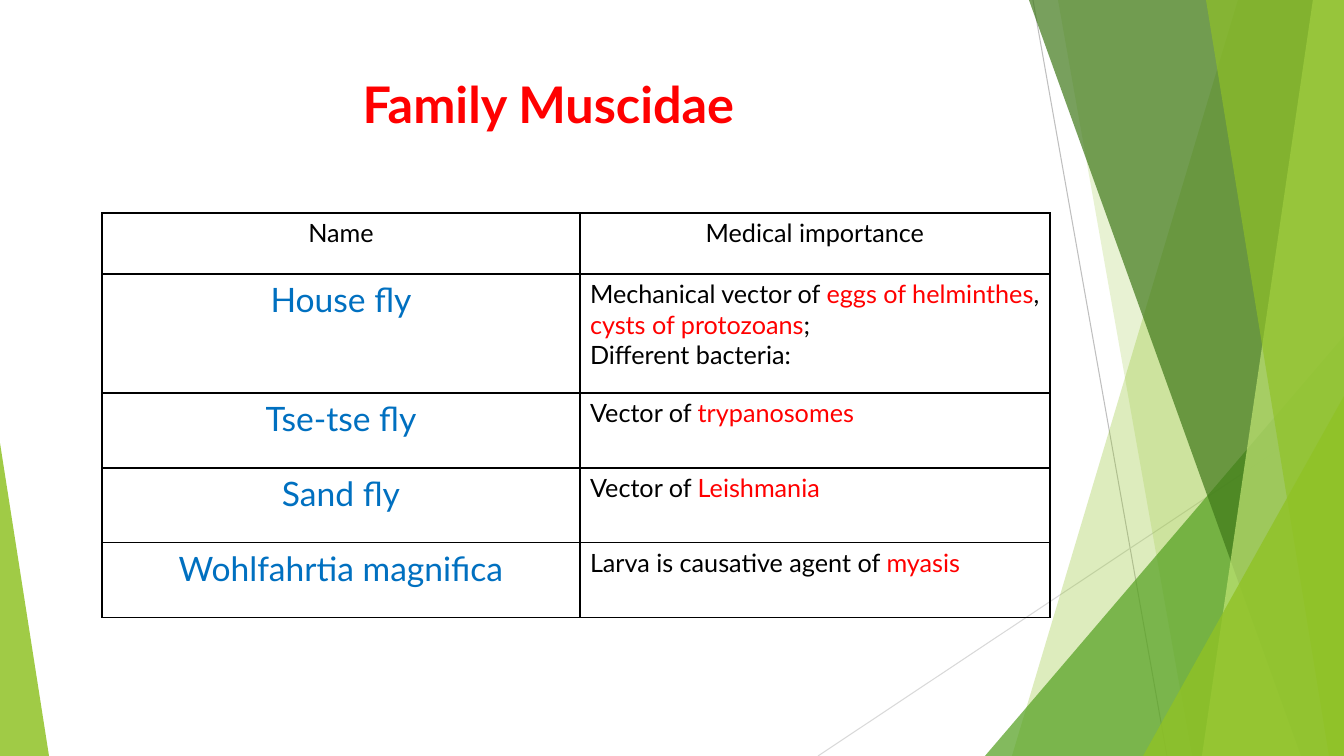
"""Build a slide on the medical importance of the Muscidae fly family."""
import pptx
import pptx.dml.color
import pptx.enum.shapes
import pptx.enum.text
import pptx.oxml
import pptx.oxml.ns
import pptx.util

TITLE = "Family Muscidae"
TITLE_BOX = (75, 68, 947, 145)
HEADERS = ("Name", "Medical importance")
FLIES = [
    ("House fly", [
        [("Mechanical vector of ", "text"), ("eggs of helminthes", "accent"), (", ", "text"),
         ("cysts of protozoans", "accent"), (";", "text")],
        [("Different bacteria:", "text")],
    ]),
    ("Tse-tse fly", [[("Vector of ", "text"), ("trypanosomes", "accent")]]),
    ("Sand fly", [[("Vector of ", "text"), ("Leishmania", "accent")]]),
    ("Wohlfahrtia magnifica", [[("Larva is causative agent of ", "text"), ("myasis", "accent")]]),
]
TABLE_ORIGIN = (102, 213)
COLUMN_WIDTHS = (478, 470)
ROW_HEIGHTS = (61, 119, 75, 75, 75)

SLIDE_SIZE = (1344, 756)
RIGHT, BOTTOM = SLIDE_SIZE
THIN_LINES = [
    ((1033, 0), (1167, BOTTOM), "line_dark"),
    ((RIGHT, 406), (818, BOTTOM), "line_light"),
]
FACETS = [
    ("band", (1238, 1012), "lime", 30),
    ("band", (1058, 1192), "lime", 20),
    ("triangle", (985, 336, 359, 420), 1, "green", 72),
    ("band", (1029, 1301), "forest", 70),
    ("band", (1313, 1202), "pale", 70),
    ("band", (1206, 1329), "lime", 65),
    ("triangle", (1143, 396, 201, 360), 1, "lime", 80),
    ("triangle", (0, 443, 49, 313), 0, "lime", 85),
]

THEME = {
    "font": "Lato",
    "sizes": {"title": 36, "name": 24, "body": 18},
    "colours": {
        "text": "000000", "accent": "FF0000", "name": "0070C0",
        "lime": "90C226", "green": "54A021", "forest": "3F7819", "pale": "C0E474",
        "line_dark": "BFBFBF", "line_light": "D9D9D9",
    },
    "thin_line": 0.75,
    "border": 1,
}
EMU_PER_PX = 914400 / 100.8
CENTER = pptx.enum.text.PP_ALIGN.CENTER
LEFT = pptx.enum.text.PP_ALIGN.LEFT


def px(length):
    return pptx.util.Emu(round(length * EMU_PER_PX))


def colour(name):
    return pptx.dml.color.RGBColor.from_string(THEME["colours"][name])


def add_thin_line(slide, start, end, colour_name):
    line = slide.shapes.add_connector(
        pptx.enum.shapes.MSO_CONNECTOR.STRAIGHT, *map(px, start + end))
    line.line.color.rgb = colour(colour_name)
    line.line.width = pptx.util.Pt(THEME["thin_line"])
    line._element.spPr.append(pptx.oxml.parse_xml(
        f'<a:effectLst {pptx.oxml.ns.nsdecls("a")}/>'))


def paint(shape, colour_name, opacity):
    shape.shadow.inherit = False
    shape.line.fill.background()
    shape.fill.solid()
    shape.fill.fore_color.rgb = colour(colour_name)
    shade = shape._element.spPr.find(".//" + pptx.oxml.ns.qn("a:srgbClr"))
    shade.append(pptx.oxml.parse_xml(
        f'<a:alpha {pptx.oxml.ns.nsdecls("a")} val="{opacity * 1000}"/>'))


def add_band(slide, edge):
    top, bottom = edge
    builder = slide.shapes.build_freeform(top, 0, scale=EMU_PER_PX)
    builder.add_line_segments([(RIGHT, 0), (RIGHT, BOTTOM), (bottom, BOTTOM)], close=True)
    return builder.convert_to_shape()


def add_triangle(slide, box, apex):
    shape = slide.shapes.add_shape(
        pptx.enum.shapes.MSO_SHAPE.ISOSCELES_TRIANGLE, *map(px, box))
    shape.adjustments[0] = apex
    return shape


def write(frame, paragraphs, size, alignment, bold=False):
    for index, runs in enumerate(paragraphs):
        paragraph = frame.add_paragraph() if index else frame.paragraphs[0]
        paragraph.alignment = alignment
        for text, colour_name in runs:
            run = paragraph.add_run()
            run.text = text
            run.font.color.rgb = colour(colour_name)
            formats = {"name": THEME["font"], "bold": bold,
                       "size": pptx.util.Pt(THEME["sizes"][size])}
            for attribute, value in formats.items():
                setattr(run.font, attribute, value)


def add_borders(cell):
    properties = cell._tc.get_or_add_tcPr()
    width = pptx.util.Pt(THEME["border"])
    for index, side in enumerate(("lnL", "lnR", "lnT", "lnB")):
        properties.insert(index, pptx.oxml.parse_xml(
            f'<a:{side} {pptx.oxml.ns.nsdecls("a")} w="{width}"><a:solidFill>'
            f'<a:srgbClr val="{THEME["colours"]["text"]}"/></a:solidFill></a:{side}>'))


def add_fly_table(slide):
    rows = [[([[(header, "text")]], "body", CENTER) for header in HEADERS]]
    rows += [[([[(name, "name")]], "name", CENTER), (importance, "body", LEFT)]
             for name, importance in FLIES]
    box = TABLE_ORIGIN + (sum(COLUMN_WIDTHS), sum(ROW_HEIGHTS))
    table = slide.shapes.add_table(len(rows), len(HEADERS), *map(px, box)).table
    table.first_row = table.horz_banding = False
    for column, width in zip(table.columns, COLUMN_WIDTHS):
        column.width = px(width)
    for row, height, contents in zip(table.rows, ROW_HEIGHTS, rows):
        row.height = px(height)
        for cell, (paragraphs, size, alignment) in zip(row.cells, contents):
            write(cell.text_frame, paragraphs, size, alignment)
            cell.fill.background()
            add_borders(cell)


def main():
    presentation = pptx.Presentation()
    presentation.slide_width, presentation.slide_height = map(px, SLIDE_SIZE)
    slide = presentation.slides.add_slide(presentation.slide_layouts[6])
    for thin_line in THIN_LINES:
        add_thin_line(slide, *thin_line)
    builders = {"band": add_band, "triangle": add_triangle}
    for kind, *geometry, colour_name, opacity in FACETS:
        paint(builders[kind](slide, *geometry), colour_name, opacity)
    title = slide.shapes.add_textbox(*map(px, TITLE_BOX))
    title.text_frame.word_wrap = True
    write(title.text_frame, [[(TITLE, "accent")]], "title", CENTER, bold=True)
    add_fly_table(slide)
    presentation.save("out.pptx")


if __name__ == "__main__":
    main()
